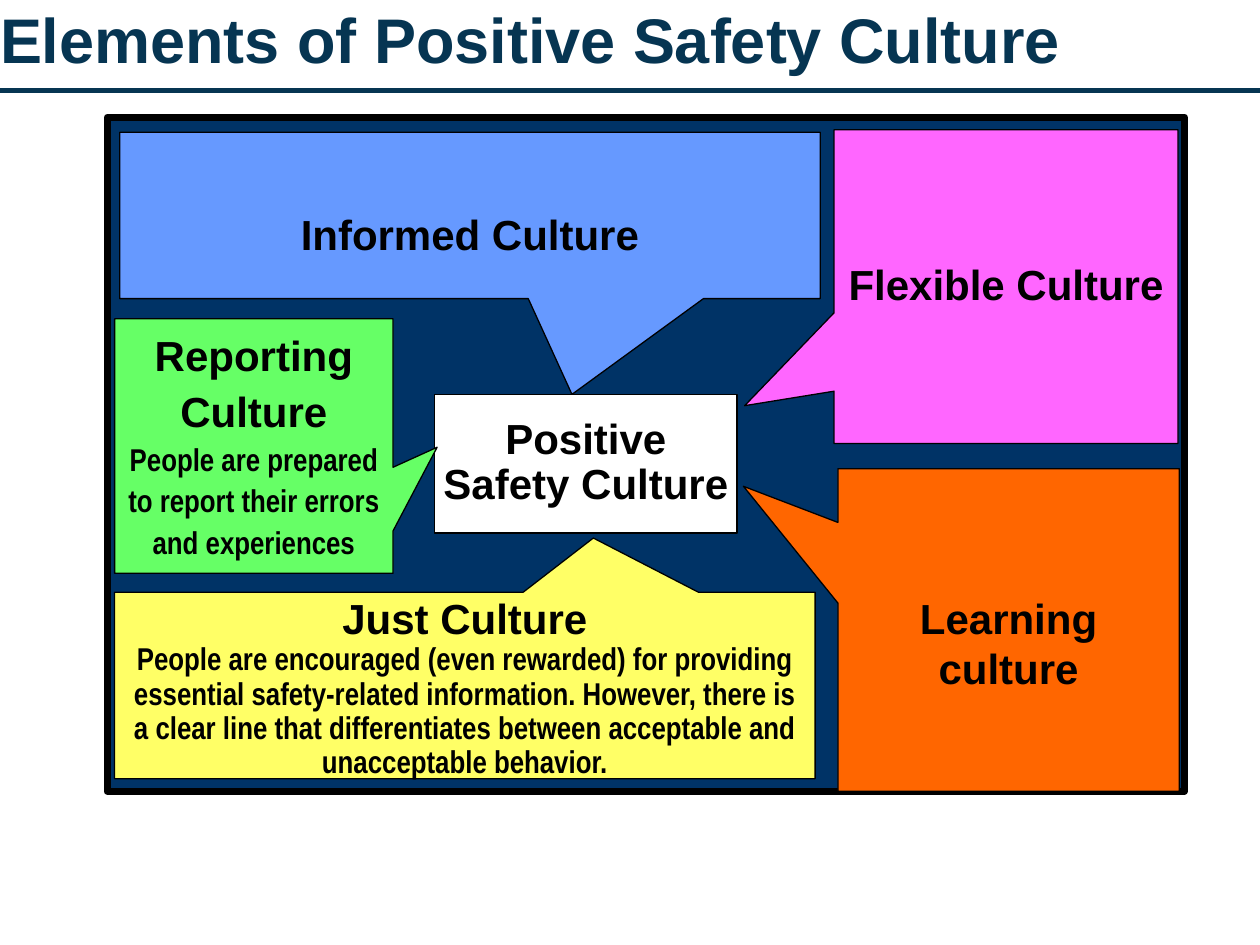
from lxml.etree import SubElement
from pptx import Presentation
from pptx.dml.color import RGBColor
from pptx.enum.shapes import MSO_CONNECTOR, MSO_SHAPE
from pptx.enum.text import MSO_ANCHOR, MSO_AUTO_SIZE, PP_ALIGN
from pptx.oxml.ns import qn
from pptx.util import Inches, Pt

COLORS = {
    "title": "063552", "panel": "003366", "black": "000000", "white": "FFFFFF",
    "pink": "FF66FF", "orange": "FF6600", "blue": "6699FF",
    "green": "66FF66", "yellow": "FFFF66",
}

CALLOUTS = [
    {"box": (6.62, 1.03, 2.73, 2.49), "tip": (5.91, 3.22), "color": "pink",
     "heading": "Flexible Culture", "spacing": 0.8, "top": 1.1, "side": 0},
    {"box": (6.65, 3.72, 2.71, 2.56), "tip": (5.9, 3.86), "color": "orange",
     "heading": "Learning culture", "spacing": 1, "top": 0.98},
    {"box": (0.95, 1.05, 5.56, 1.32), "tip": (4.54, 3.13), "color": "blue",
     "heading": "Informed Culture", "spacing": 0.9, "top": 0.65},
    {"box": (0.91, 2.53, 2.21, 2.02), "tip": (3.47, 3.55), "color": "green",
     "heading": "Reporting Culture", "spacing": 1.1,
     "detail": "People are prepared to report their errors and experiences"},
    {"box": (0.91, 4.7, 5.56, 1.48), "tip": (4.71, 4.27), "color": "yellow",
     "heading": "Just Culture", "spacing": 0.9,
     "detail": "People are encouraged (even rewarded) for providing essential "
               "safety-related information. However, there is a clear line that "
               "differentiates between acceptable and unacceptable behavior."},
]


def rgb(name):
    """Return the named colour."""
    return RGBColor.from_string(COLORS[name])


def set_font(paragraph, size, name="Arial", color="black"):
    """Format the runs of a paragraph in bold."""
    for run in paragraph.runs:
        run.font.name = name
        run.font.size = Pt(size)
        run.font.bold = True
        run.font.color.rgb = rgb(color)


def add_box(slide, kind, box, fill, line_width=0.75):
    """Add a filled shape with a black outline."""
    shape = slide.shapes.add_shape(kind, *map(Inches, box))
    shape.shadow.inherit = False
    shape.fill.solid()
    shape.fill.fore_color.rgb = rgb(fill)
    shape.line.color.rgb = rgb("black")
    shape.line.width = Pt(line_width)
    return shape


def write_lines(shape, lines, spacing):
    """Write centred paragraphs given as (text, size, font) tuples."""
    frame = shape.text_frame
    frame.text = "\n".join(text for text, _, _ in lines)
    for paragraph, (_, size, name) in zip(frame.paragraphs, lines):
        paragraph.alignment = PP_ALIGN.CENTER
        paragraph.line_spacing = spacing
        set_font(paragraph, size, name)


def add_title(slide, box):
    """Place the title and the rule below it."""
    title = slide.shapes.title
    title.left, title.top, title.width, title.height = map(Inches, box)
    frame = title.text_frame
    frame.text = "Elements of Positive Safety Culture"
    frame.auto_size = MSO_AUTO_SIZE.NONE
    frame.vertical_anchor = MSO_ANCHOR.MIDDLE
    frame.margin_left = frame.margin_right = frame.margin_top = frame.margin_bottom = 0
    frame.paragraphs[0].alignment = PP_ALIGN.LEFT
    set_font(frame.paragraphs[0], 36, color="title")
    left, top, width, height = box
    rule_y = Inches(top + height + 0.11)
    rule = slide.shapes.add_connector(
        MSO_CONNECTOR.STRAIGHT, Inches(left), rule_y, Inches(left + width), rule_y)
    rule.line.color.rgb = rgb("title")
    rule.line.width = Pt(2.5)
    SubElement(rule._element.spPr, qn("a:effectLst"))


def add_center(slide, box):
    """Place the central box that the callouts point to."""
    shape = add_box(slide, MSO_SHAPE.RECTANGLE, box, "white")
    shape.text_frame.word_wrap = False
    shape.text_frame.vertical_anchor = MSO_ANCHOR.MIDDLE
    write_lines(shape, [("Positive", 24, "Arial"), ("Safety Culture", 24, "Arial")], 0.9)


def add_callout(slide, box, tip, color, heading, spacing, top=0.05, side=0.1, detail=None):
    """Place a rectangular callout whose tail ends at the tip."""
    shape = add_box(slide, MSO_SHAPE.RECTANGULAR_CALLOUT, box, color)
    for index in range(2):
        shape.adjustments[index] = (tip[index] - box[index]) / box[index + 2] - 0.5
    frame = shape.text_frame
    frame.word_wrap = True
    frame.vertical_anchor = MSO_ANCHOR.TOP
    frame.margin_top = Inches(top)
    frame.margin_left = frame.margin_right = Inches(side)
    lines = [(heading, 24, "Arial")]
    if detail:
        lines.append((detail, 18, "Arial Narrow"))
    write_lines(shape, lines, spacing)


def main():
    """Build and save the slide."""
    presentation = Presentation()
    presentation.slide_width, presentation.slide_height = Inches(10), Inches(7.5)
    slide = presentation.slides.add_slide(presentation.slide_layouts[5])
    add_title(slide, (0, -0.01, 10, 0.62))
    add_box(slide, MSO_SHAPE.RECTANGLE, (0.85, 0.93, 8.55, 5.35), "panel", 4)
    add_center(slide, (3.45, 3.13, 2.4, 1.1))
    for callout in CALLOUTS:
        add_callout(slide, **callout)
    presentation.save("out.pptx")


if __name__ == "__main__":
    main()
